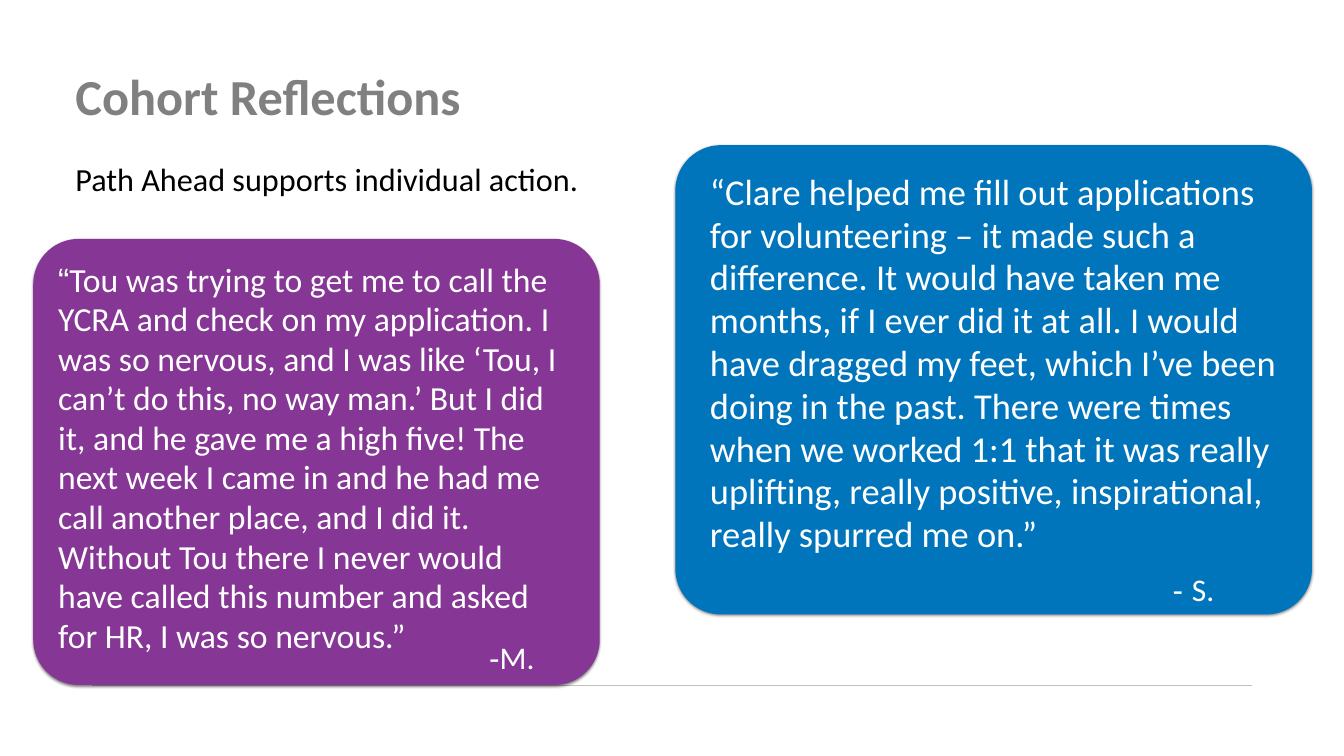
from lxml import etree
from pptx import Presentation
from pptx.dml.color import RGBColor
from pptx.enum.shapes import MSO_CONNECTOR, MSO_SHAPE
from pptx.enum.text import MSO_ANCHOR, MSO_AUTO_SIZE
from pptx.oxml import parse_xml
from pptx.oxml.ns import qn
from pptx.util import Pt

NS = "http://schemas.openxmlformats.org/drawingml/2006/main"
SHADOW = (
    f'<a:effectLst xmlns:a="{NS}">'
    '<a:outerShdw blurRad="38100" dist="25400" dir="5400000" rotWithShape="0">'
    '<a:srgbClr val="000000"><a:alpha val="50000"/></a:srgbClr>'
    "</a:outerShdw></a:effectLst>"
)


def color(value):
    return RGBColor.from_string(value)


def add_text(box, runs, size, fill, bold=False, middle=False, wrap=True, grow=True, spacing=None):
    tf = s.shapes.add_textbox(*map(Pt, box)).text_frame
    tf.word_wrap = wrap
    tf.auto_size = MSO_AUTO_SIZE.SHAPE_TO_FIT_TEXT if grow else MSO_AUTO_SIZE.NONE
    tf.vertical_anchor = MSO_ANCHOR.MIDDLE if middle else MSO_ANCHOR.TOP
    tf.margin_left = tf.margin_right = tf.margin_top = tf.margin_bottom = Pt(4)
    p = tf.paragraphs[0]
    p.line_spacing = spacing
    for text, font in runs:
        r = p.add_run()
        r.text = text
        r.font.name = font
        r.font.size = Pt(size)
        r.font.bold = bold
        r.font.color.rgb = color(fill)


prs = Presentation()
prs.slide_width, prs.slide_height = Pt(1920), Pt(1080)
s = prs.slides.add_slide(prs.slide_layouts[6])

rule = s.shapes.add_connector(MSO_CONNECTOR.STRAIGHT, Pt(132), Pt(979), Pt(1788), Pt(979))
rule.line.color.rgb = color("BFBFBF")
rule.line.width = Pt(0.5)
etree.SubElement(rule._element.spPr, qn("a:effectLst"))

add_text((103.7, 87, 1585.5, 99.4), [("Cohort Reflections", "Calibri")], 72, "808080",
         bold=True, middle=True)
add_text((103.7, 223, 971, 64), [("Path Ahead supports individual action.", "Calibri")], 46, "000000")

quotes = [
    ((47.5, 341.3, 809.3, 637.2), 0.102, "863694",
     (79.2, 368, 745.2, 586), 48.1,
     [("“", "Arial"),
      ("Tou was trying to get me to call the YCRA and check on my application. "
       "I was so nervous, and I was like ‘Tou, I can’t do this, no way man.’ "
       "But I did it, and he gave me a high five! The next week I came in and he had me "
       "call another place, and I did it. Without Tou there I never would have called "
       "this number and asked for HR, I was so nervous.”", "Calibri")],
     (694.8, 907.2, 73.4, 62.6), [("-", "Arial"), ("M.", "Calibri")]),
    ((964.8, 207.4, 909.4, 670.3), 0.097, "0075BC",
     (1010.2, 240.5, 826.6, 599), 52,
     [("“Clare helped me fill out applications for volunteering – it made such a difference. "
       "It would have taken me months, if I ever did it at all. I would have dragged my feet, "
       "which I’ve been doing in the past. There were times when we worked 1:1 that it was "
       "really uplifting, really positive, inspirational, really spurred me on.”", "Calibri")],
     (1671.1, 810.7, 68.4, 62.6), [("- ", "Arial"), ("S.", "Calibri")]),
]
for card, corner, fill, body, size, quote, sign, author in quotes:
    sp = s.shapes.add_shape(MSO_SHAPE.ROUNDED_RECTANGLE, *map(Pt, card))
    sp.adjustments[0] = corner
    sp.fill.solid()
    sp.fill.fore_color.rgb = color(fill)
    sp.line.fill.background()
    sp._element.spPr.append(parse_xml(SHADOW))
    add_text(body, quote, size, "FFFFFF", grow=False, spacing=0.98)
    add_text(sign, author, 45, "FFFFFF", middle=True, wrap=False)

prs.save("out.pptx")
